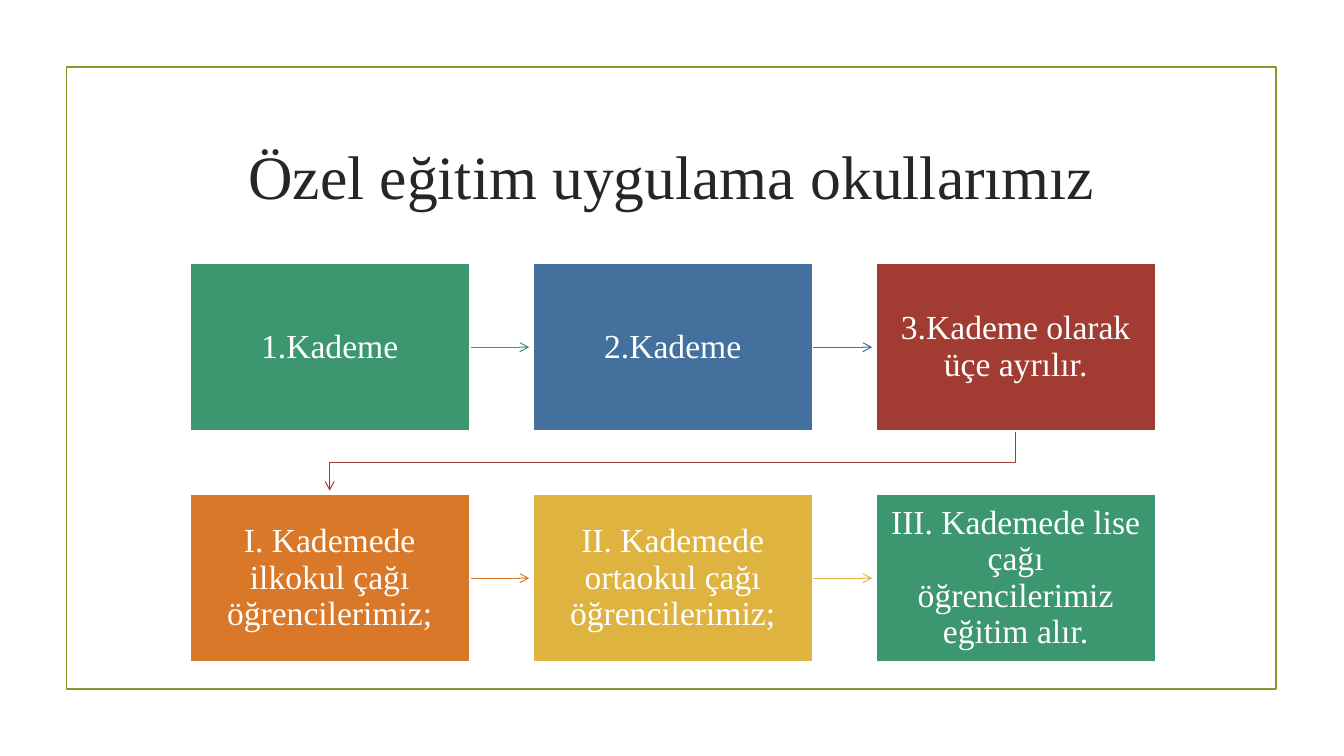
from lxml import etree
from pptx import Presentation
from pptx.dml.color import RGBColor
from pptx.enum.shapes import MSO_CONNECTOR, MSO_SHAPE
from pptx.enum.text import MSO_ANCHOR, PP_ALIGN
from pptx.oxml.ns import qn
from pptx.util import Emu, Pt

RECTANGLE = MSO_SHAPE.RECTANGLE
STRAIGHT = MSO_CONNECTOR.STRAIGHT
MIDDLE = MSO_ANCHOR.MIDDLE
CENTER = PP_ALIGN.CENTER

EMU_PER_PX = 6350  # 144 px to the inch
FONT = "Times New Roman"
RIGHT_SIDE = 3

BOX_WIDTH, BOX_HEIGHT = 400, 240
GRID_LEFT, GRID_TOP = 271, 376
COLUMN_STEP, ROW_STEP = 490, 330
COLUMNS = 3
ARROW_GAP = 5  # space between an arrow tip and the next box
INSET = 20

STEPS = [
    ("1.Kademe", "3C9770"),
    ("2.Kademe", "44709D"),
    ("3.Kademe olarak üçe ayrılır.", "A23C33"),
    ("I. Kademede ilkokul çağı öğrencilerimiz;", "D97828"),
    ("II. Kademede ortaokul çağı öğrencilerimiz;", "DEB340"),
    ("III. Kademede lise çağı öğrencilerimiz eğitim alır.", "3C9770"),
]


def px(value):
    return Emu(value * EMU_PER_PX)


def color(hex_value):
    return RGBColor.from_string(hex_value)


def set_line(shape, hex_value, width):
    shape.line.color.rgb = color(hex_value)
    shape.line.width = Pt(width)


def write_text(shape, text, size, hex_value):
    frame = shape.text_frame
    frame.word_wrap = True
    frame.vertical_anchor = MIDDLE
    para = frame.paragraphs[0]
    para.text = text
    para.alignment = CENTER
    para.line_spacing = 0.9
    para.font.name = FONT
    para.font.size = Pt(size)
    para.font.color.rgb = color(hex_value)


def add_rectangle(page, left, top, width, height, fill, line):
    box = page.shapes.add_shape(
        RECTANGLE, px(left), px(top), px(width), px(height))
    box.shadow.inherit = False
    if fill:
        box.fill.solid()
        box.fill.fore_color.rgb = color(fill)
    else:
        box.fill.background()
    set_line(box, line, 1.25)
    return box


def add_title(page, text):
    title = page.shapes.add_textbox(px(204), px(154), px(1512), px(206))
    write_text(title, text, 44, "262626")


def add_step(page, left, top, text, fill):
    box = add_rectangle(
        page, left, top, BOX_WIDTH, BOX_HEIGHT, fill, "FFFFFF")
    frame = box.text_frame
    frame.margin_left = frame.margin_right = px(INSET)
    frame.margin_top = frame.margin_bottom = px(INSET)
    write_text(box, text, 24, "FFFFFF")
    return box


def style_arrow(arrow, hex_value):
    set_line(arrow, hex_value, 0.75)
    etree.SubElement(arrow.line._get_or_add_ln(), qn("a:tailEnd"), type="arrow")


def add_arrow_right(page, box, left, top, hex_value):
    """Draw an arrow from the box's right side, behind the box."""
    start = left + BOX_WIDTH
    end = left + COLUMN_STEP - ARROW_GAP
    middle = px(top + BOX_HEIGHT // 2)
    arrow = page.shapes.add_connector(
        STRAIGHT, px(start), middle, px(end), middle)
    arrow.begin_connect(box, RIGHT_SIDE)
    style_arrow(arrow, hex_value)
    etree.SubElement(arrow._element.spPr, qn("a:effectLst"))
    box._element.addprevious(arrow._element)


def add_arrow_to_next_row(page, box, left, top, hex_value):
    """Draw a bent arrow from under the box to the first box of the next row."""
    start_x = left + BOX_WIDTH // 2
    end_x = GRID_LEFT + BOX_WIDTH // 2
    start_y = top + BOX_HEIGHT
    next_top = top + ROW_STEP
    turn_y = (start_y + next_top) // 2
    builder = page.shapes.build_freeform(start_x, start_y, scale=EMU_PER_PX)
    builder.add_line_segments(
        [(start_x, turn_y), (end_x, turn_y), (end_x, next_top - ARROW_GAP)],
        close=False)
    arrow = builder.convert_to_shape()
    arrow.shadow.inherit = False
    arrow.fill.background()
    style_arrow(arrow, hex_value)
    box._element.addprevious(arrow._element)


def main():
    deck = Presentation()
    deck.slide_width, deck.slide_height = px(1920), px(1080)
    page = deck.slides.add_slide(deck.slide_layouts[6])

    add_rectangle(page, 95, 96, 1728, 888, None, "83992A")
    add_title(page, "Özel eğitim uygulama okullarımız")

    for index, (text, fill) in enumerate(STEPS):
        row, column = divmod(index, COLUMNS)
        left = GRID_LEFT + column * COLUMN_STEP
        top = GRID_TOP + row * ROW_STEP
        box = add_step(page, left, top, text, fill)
        if column < COLUMNS - 1:
            add_arrow_right(page, box, left, top, fill)
        elif index < len(STEPS) - 1:
            add_arrow_to_next_row(page, box, left, top, fill)

    deck.save("out.pptx")


if __name__ == "__main__":
    main()
